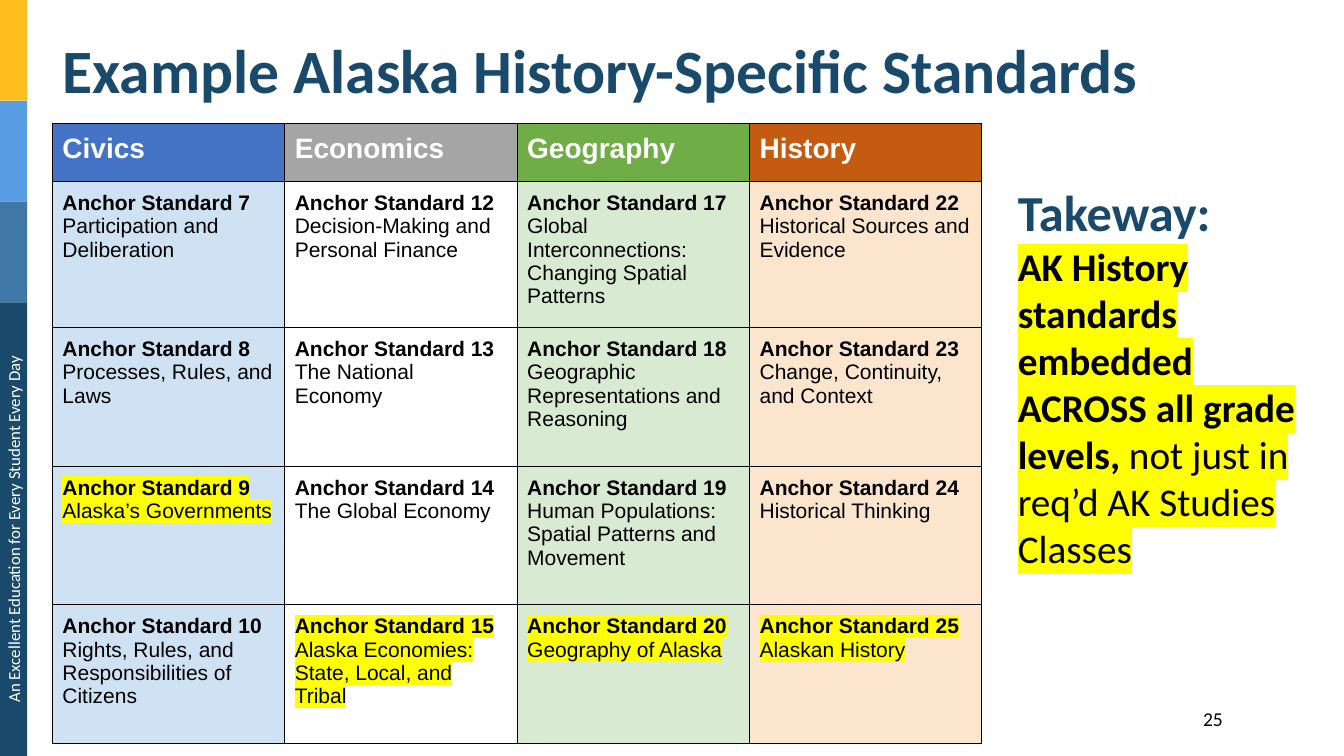
from lxml.etree import SubElement as Sub
from pptx import Presentation
from pptx.dml.color import RGBColor as RGB
from pptx.enum.shapes import MSO_SHAPE as Shape
from pptx.enum.text import MSO_ANCHOR as Anchor, PP_ALIGN as Align
from pptx.oxml import parse_xml
from pptx.oxml.ns import nsdecls, qn
from pptx.util import Pt

HUE = {
    "navy": "194A6B", "steel": "3F78A7", "sky": "589CE3", "gold": "FFBF20",
    "black": "000000", "white": "FFFFFF", "mark": "FFFF00",
}


def write(para, text, hue, mark=False, **form):
    run = para.add_run()
    run.text = text
    run.font.color.rgb = RGB.from_string(HUE[hue])
    for key, value in form.items():
        setattr(run.font, key, value)
    if mark:
        tint = parse_xml(
            f'<a:highlight {nsdecls("a")}><a:srgbClr val="{HUE["mark"]}"/></a:highlight>')
        run.font._element.find(qn("a:solidFill")).addnext(tint)


def pad(item, side, ends):
    form = {"margin_left": side, "margin_right": side, "margin_top": ends, "margin_bottom": ends}
    for key, value in form.items():
        setattr(item, key, Pt(value))


deck = Presentation()
deck.slide_width, deck.slide_height = Pt(960), Pt(540)
slide = deck.slides.add_slide(deck.slide_layouts[5])
shapes = slide.shapes

top = 0
for hue, tall in [("gold", 72), ("sky", 72), ("steel", 72), ("navy", 324)]:
    band = shapes.add_shape(Shape.RECTANGLE, Pt(0), Pt(top), Pt(19.4), Pt(tall))
    band.shadow.inherit = False
    band.fill.solid()
    band.fill.fore_color.rgb = RGB.from_string(HUE[hue])
    band.line.fill.background()
    top += tall

labels = [
    ("An Excellent Education for Every Student Every Day",
     (-152.4, 367.2, 324, 21.6), 270, Align.CENTER, "white", 12),
    ("25", (819.4, 501.1, 61.2, 24.5), 0, Align.RIGHT, "black", 14),
]
for text, place, turn, align, hue, size in labels:
    label = shapes.add_textbox(*map(Pt, place))
    label.rotation = turn
    frame = label.text_frame
    frame.word_wrap = True
    pad(frame, 7.2, 3.6)
    para = frame.paragraphs[0]
    para.alignment = align
    write(para, text, hue, size=Pt(size), name="Calibri")

title = shapes.title
title.left, title.top, title.width, title.height = map(Pt, (37.4, 0, 828, 104.4))
frame = title.text_frame
frame.vertical_anchor = Anchor.MIDDLE
frame.word_wrap = True
pad(frame, 7.2, 3.6)
para = frame.paragraphs[0]
para.alignment = Align.LEFT
para.line_spacing = 0.9
write(para, "Example Alaska History-Specific Standards", "navy",
      size=Pt(44), bold=True, name="Calibri")

note = shapes.add_textbox(Pt(720), Pt(122.4), Pt(216), Pt(324))
frame = note.text_frame
frame.word_wrap = True
pad(frame, 7.2, 7.2)
write(frame.paragraphs[0], "Takeway:", "navy", size=Pt(36), bold=True, name="Calibri")
para = frame.add_paragraph()
for text, bold in [("AK History standards embedded ACROSS all grade levels,", True),
                   (" not just in req’d AK Studies Classes", False)]:
    write(para, text, "black", True, size=Pt(28), bold=bold, name="Calibri")

strands = [
    ("Civics", "4472C4", "CFE2F3", 7, [
        "Participation and Deliberation", "Processes, Rules, and Laws",
        "Alaska’s Governments", "Rights, Rules, and Responsibilities of Citizens"]),
    ("Economics", "A5A5A5", None, 12, [
        "Decision-Making and Personal Finance", "The National Economy",
        "The Global Economy", "Alaska Economies: State, Local, and Tribal"]),
    ("Geography", "70AD47", "D9EAD3", 17, [
        "Global Interconnections: Changing Spatial Patterns",
        "Geographic Representations and Reasoning",
        "Human Populations: Spatial Patterns and Movement", "Geography of Alaska"]),
    ("History", "C55A11", "FCE5CD", 22, [
        "Historical Sources and Evidence", "Change, Continuity, and Context",
        "Historical Thinking", "Alaskan History"]),
]
inline = {12, 13, 17}
marked = {9, 15, 20, 25}

grid = shapes.add_table(5, 4, Pt(37.4), Pt(88), Pt(664), Pt(437.5)).table
grid.first_row = grid.horz_banding = False
for col in grid.columns:
    col.width = Pt(166)
for i, row in enumerate(grid.rows):
    row.height = Pt(99 if i else 41.5)

for x, (head, dark, pale, first, topics) in enumerate(strands):
    for y, text in enumerate([head] + topics):
        cell = grid.cell(y, x)
        pad(cell, 7.2, 7.2)
        props = cell._tc.get_or_add_tcPr()
        for side in ("lnL", "lnR", "lnT", "lnB"):
            edge = Sub(props, qn(f"a:{side}"), w=str(Pt(0.75)))
            Sub(Sub(edge, qn("a:solidFill")), qn("a:srgbClr"), val=HUE["black"])
        tone = pale if y else dark
        if tone:
            cell.fill.solid()
            cell.fill.fore_color.rgb = RGB.from_string(tone)
        else:
            cell.fill.background()
        frame = cell.text_frame
        para = frame.paragraphs[0]
        if y == 0:
            write(para, text, "white", size=Pt(20), bold=True, name="Arial")
            continue
        num = first + y - 1
        form = {"mark": num in marked, "size": Pt(15), "name": "Arial"}
        write(para, f"Anchor Standard {num}", "black", bold=True, **form)
        if num in inline:
            text = " " + text
        else:
            para = frame.add_paragraph()
        write(para, text, "black", bold=False, **form)

deck.save("out.pptx")
